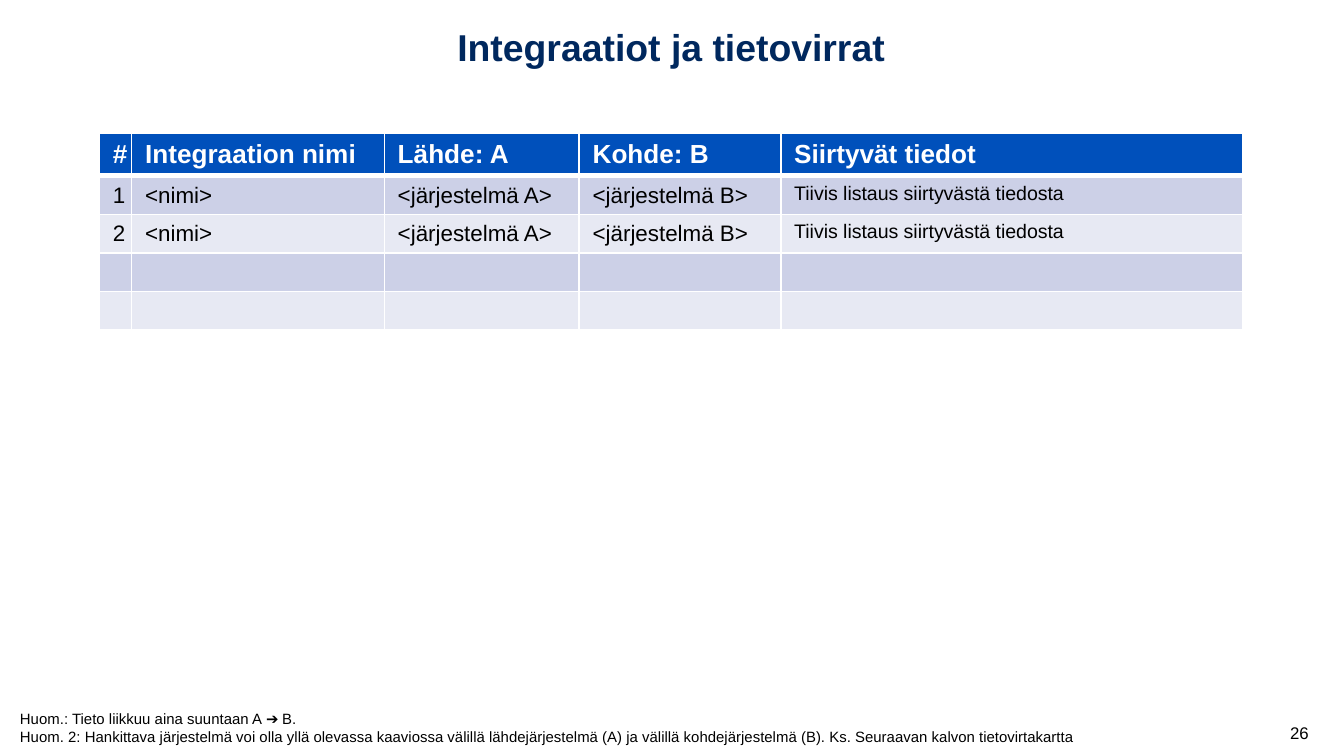
from lxml.etree import SubElement
from pptx import Presentation
from pptx.dml.color import RGBColor
from pptx.enum.text import MSO_ANCHOR, MSO_AUTO_SIZE, PP_ALIGN
from pptx.oxml import parse_xml
from pptx.oxml.ns import nsdecls, qn
from pptx.util import Inches, Pt

FONT = "Arial"
WHITE, BLACK, NAVY, BLUE = "FFFFFF", "000000", "00285E", "0050BB"
BANDS = ["CCD0E7", "E7E9F3"]

SLIDE_WIDTH = 10
SLIDE_HEIGHT = SLIDE_WIDTH * 9 / 16
COLUMN_WIDTHS = [0.23, 1.88, 1.45, 1.5, 3.44]
HEADER_HEIGHT, ROW_HEIGHT = 0.31, 0.28
HEADINGS = ["#", "Integraation nimi", "Lähde: A", "Kohde: B", "Siirtyvät tiedot"]
INTEGRATION = ["<nimi>", "<järjestelmä A>", "<järjestelmä B>",
               "Tiivis listaus siirtyvästä tiedosta"]
ROWS = [HEADINGS, ["1"] + INTEGRATION, ["2"] + INTEGRATION, [""] * 5, [""] * 5]
NOTES = [
    "Huom.: Tieto liikkuu aina suuntaan A ➔ B.",
    "Huom. 2: Hankittava järjestelmä voi olla yllä olevassa kaaviossa välillä "
    "lähdejärjestelmä (A) ja välillä kohdejärjestelmä (B). "
    "Ks. Seuraavan kalvon tietovirtakartta",
]


def color(value):
    return RGBColor.from_string(value)


def write(paragraph, text, size, text_color=BLACK, bold=False):
    """Add one formatted run, or just set the line's font when there is no text."""
    if not text:
        end = SubElement(paragraph._p, qn("a:endParaRPr"), sz=str(size * 100))
        SubElement(end, qn("a:latin"), typeface=FONT)
        return
    run = paragraph.add_run()
    run.text = text
    for name, value in {"name": FONT, "size": Pt(size), "bold": bold}.items():
        setattr(run.font, name, value)
    run.font.color.rgb = color(text_color)


def add_text(slide, box, lines, size, text_color=BLACK, bold=False,
             alignment=PP_ALIGN.LEFT, **frame_format):
    frame = slide.shapes.add_textbox(*map(Inches, box)).text_frame
    for name, value in {"word_wrap": True, **frame_format}.items():
        setattr(frame, name, value)
    for index, line in enumerate(lines):
        paragraph = frame.add_paragraph() if index else frame.paragraphs[0]
        paragraph.alignment = alignment
        write(paragraph, line, size, text_color, bold)


def set_borders(cell, widths):
    """Draw white borders; widths maps each side to points."""
    properties = cell._tc.get_or_add_tcPr()
    for index, (side, width) in enumerate(widths.items()):
        properties.insert(index, parse_xml(
            f'<a:{side} {nsdecls("a")} w="{Pt(width)}"><a:solidFill>'
            f'<a:srgbClr val="{WHITE}"/></a:solidFill></a:{side}>'))


def add_integration_table(slide, left, top):
    heights = [HEADER_HEIGHT] + [ROW_HEIGHT] * (len(ROWS) - 1)
    table = slide.shapes.add_table(
        len(ROWS), len(COLUMN_WIDTHS), Inches(left), Inches(top),
        Inches(sum(COLUMN_WIDTHS)), Inches(sum(heights))).table
    for column, width in zip(table.columns, COLUMN_WIDTHS):
        column.width = Inches(width)
    for row, height in zip(table.rows, heights):
        row.height = Inches(height)

    for row_index, texts in enumerate(ROWS):
        is_header = row_index == 0
        for column_index, text in enumerate(texts):
            cell = table.cell(row_index, column_index)
            cell.fill.solid()
            cell.fill.fore_color.rgb = color(
                BLUE if is_header else BANDS[(row_index - 1) % 2])
            set_borders(cell, {"lnL": 1, "lnR": 1, "lnT": 3 if row_index == 1 else 1,
                               "lnB": 3 if is_header else 1})
            paragraph = cell.text_frame.paragraphs[0]
            if is_header:
                write(paragraph, text, 14, WHITE, bold=True)
            else:
                is_details = text and column_index == len(texts) - 1
                write(paragraph, text, 10.5 if is_details else 12)


def build_slide(presentation):
    slide = presentation.slides.add_slide(presentation.slide_layouts[6])
    # Integration table
    add_integration_table(slide, 0.74, 0.99)
    # Page number
    add_text(slide, (9.5, 5.3, 0.45, 0.3), ["26"], 9,
             vertical_anchor=MSO_ANCHOR.MIDDLE)
    # Title
    add_text(slide, (0.15, 0.13, 9.69, 0.74), ["Integraatiot ja tietovirrat"], 20,
             NAVY, bold=True, alignment=PP_ALIGN.CENTER)
    # Footnotes
    add_text(slide, (0.05, 5.23, 8.18, 0.37), NOTES, 8,
             word_wrap=False, auto_size=MSO_AUTO_SIZE.SHAPE_TO_FIT_TEXT)


def main():
    presentation = Presentation()
    presentation.slide_width = Inches(SLIDE_WIDTH)
    presentation.slide_height = Inches(SLIDE_HEIGHT)
    build_slide(presentation)
    presentation.save("out.pptx")


if __name__ == "__main__":
    main()
